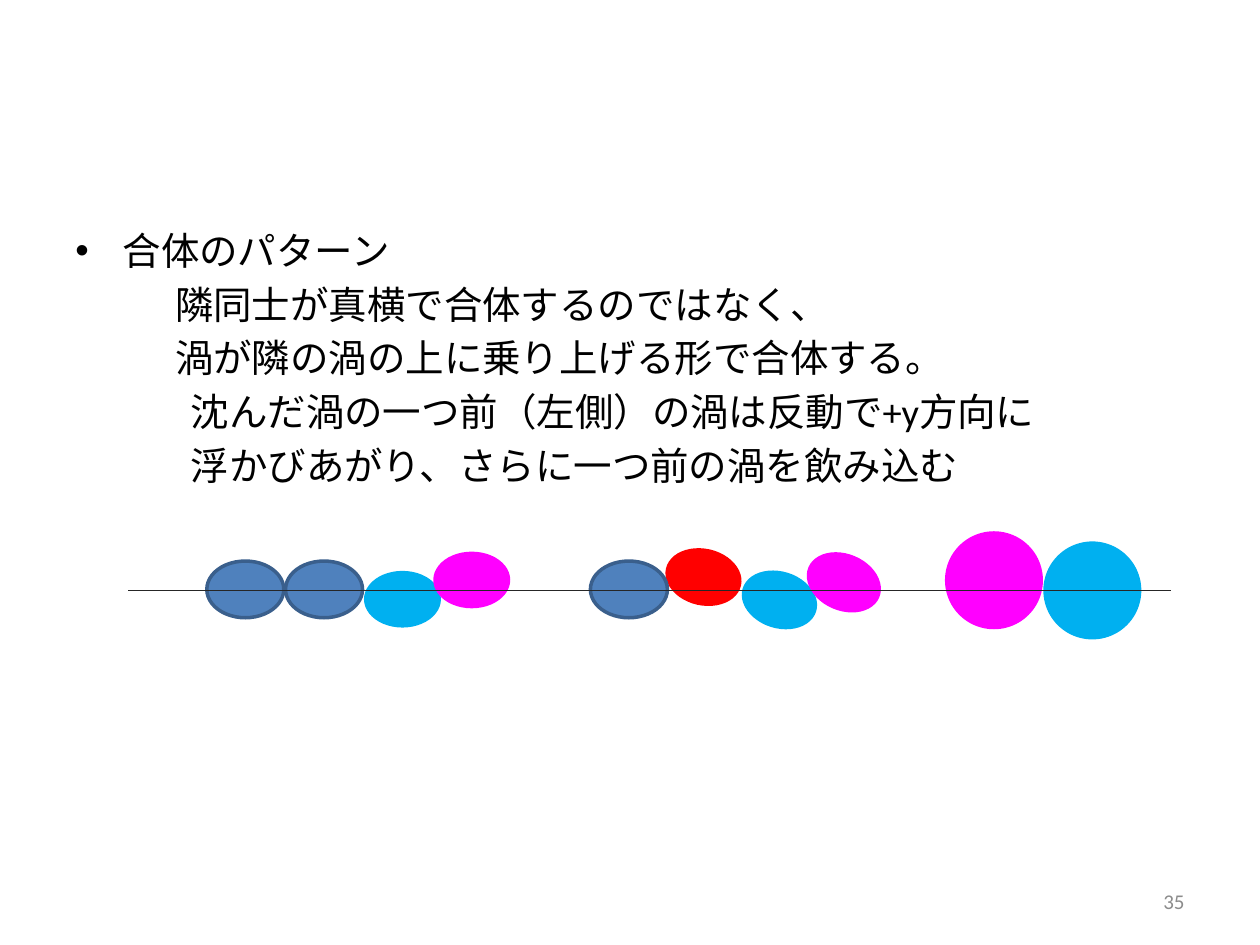
from lxml import etree
from pptx import Presentation
from pptx.dml.color import RGBColor
from pptx.enum import shapes, text
from pptx.oxml.ns import qn
from pptx.util import Pt

BLACK = RGBColor(0x00, 0x00, 0x00)
GREY = RGBColor(0x8C, 0x8C, 0x8C)
AXIS = RGBColor(0x26, 0x26, 0x26)
BLUE = RGBColor(0x4F, 0x81, 0xBD)
OUTLINE = RGBColor(0x3A, 0x5F, 0x8C)
CYAN = RGBColor(0x00, 0xB0, 0xF0)
MAGENTA = RGBColor(0xFF, 0x00, 0xFF)
RED = RGBColor(0xFF, 0x00, 0x00)

# Wording and left margin; the first line carries the bullet.
PATTERN_LINES = [
    ("合体のパターン", 27),
    ("隣同士が真横で合体するのではなく、", 57),
    ("渦が隣の渦の上に乗り上げる形で合体する。", 57),
    ("沈んだ渦の一つ前（左側）の渦は反動で+y方向に", 66),
    ("浮かびあがり、さらに一つ前の渦を飲み込む", 66),
]
BULLET_INDENT = 27
PAGE_NUMBER = "35"

SMALL = (44, 32.4)
MERGED = (56, 56)
# Left, top, size, rotation, colour; from back to front.
VORTICES = [
    (208, 326.2, SMALL, 0, CYAN),
    (247.6, 315.2, SMALL, 0, MAGENTA),
    (423.4, 326.6, SMALL, 17.6, CYAN),
    (460.2, 316.6, SMALL, 23.2, MAGENTA),
    (596.2, 309.4, MERGED, 0, CYAN),
    (163.2, 320.6, SMALL, 0, BLUE),
    (380, 313.6, SMALL, 12.7, RED),
    (118.2, 320.6, SMALL, 0, BLUE),
    (337.4, 320.6, SMALL, 0, BLUE),
    (540, 303.6, MERGED, 0, MAGENTA),
]
AXIS_LEFT, AXIS_RIGHT, AXIS_Y = 73.4, 669.4, 337.6


def add_frame(slide, left, top, width, height, anchor):
    frame = slide.shapes.add_textbox(Pt(left), Pt(top), Pt(width), Pt(height)).text_frame
    frame.word_wrap = True
    frame.vertical_anchor = anchor
    return frame


def write(paragraph, words, size, colour, **layout):
    run = paragraph.add_run()
    run.text = words
    run.font.color.rgb = colour
    for name, value in {"name": "Calibri", "size": Pt(size)}.items():
        setattr(run.font, name, value)
    for name, value in layout.items():
        setattr(paragraph, name, value)


def set_margins(paragraph, margin, bulleted):
    properties = paragraph._p.get_or_add_pPr()
    properties.set("marL", str(Pt(margin)))
    properties.set("indent", str(Pt(-BULLET_INDENT if bulleted else 0)))
    if bulleted:
        etree.SubElement(properties, qn("a:buFont")).set("typeface", "Arial")
        etree.SubElement(properties, qn("a:buChar")).set("char", "•")
    else:
        etree.SubElement(properties, qn("a:buNone"))


def add_vortex(slide, left, top, size, rotation, colour):
    vortex = slide.shapes.add_shape(
        shapes.MSO_SHAPE.OVAL, Pt(left), Pt(top), Pt(size[0]), Pt(size[1]))
    vortex.shadow.inherit = False
    vortex.rotation = rotation
    vortex.fill.solid()
    vortex.fill.fore_color.rgb = colour
    if colour == BLUE:
        vortex.line.color.rgb = OUTLINE
        vortex.line.width = Pt(2)
    else:
        vortex.line.fill.background()


def main():
    deck = Presentation()
    deck.slide_width, deck.slide_height = Pt(720), Pt(540)
    slide = deck.slides.add_slide(deck.slide_layouts[6])

    pattern = add_frame(slide, 36, 126, 648, 356.4, text.MSO_ANCHOR.TOP)
    for i, (words, margin) in enumerate(PATTERN_LINES):
        paragraph = pattern.add_paragraph() if i else pattern.paragraphs[0]
        write(paragraph, words, 22, BLACK, space_before=Pt(4.4))
        set_margins(paragraph, margin, bulleted=i == 0)

    footer = add_frame(slide, 516, 500.5, 168, 28.75, text.MSO_ANCHOR.MIDDLE)
    write(footer.paragraphs[0], PAGE_NUMBER, 12, GREY, alignment=text.PP_ALIGN.RIGHT)

    for vortex in VORTICES:
        add_vortex(slide, *vortex)

    axis = slide.shapes.add_connector(
        shapes.MSO_CONNECTOR.STRAIGHT, Pt(AXIS_LEFT), Pt(AXIS_Y), Pt(AXIS_RIGHT), Pt(AXIS_Y))
    axis.line.color.rgb = AXIS
    axis.line.width = Pt(0.75)
    etree.SubElement(axis._element.spPr, qn("a:effectLst"))

    deck.save("out.pptx")


if __name__ == "__main__":
    main()
